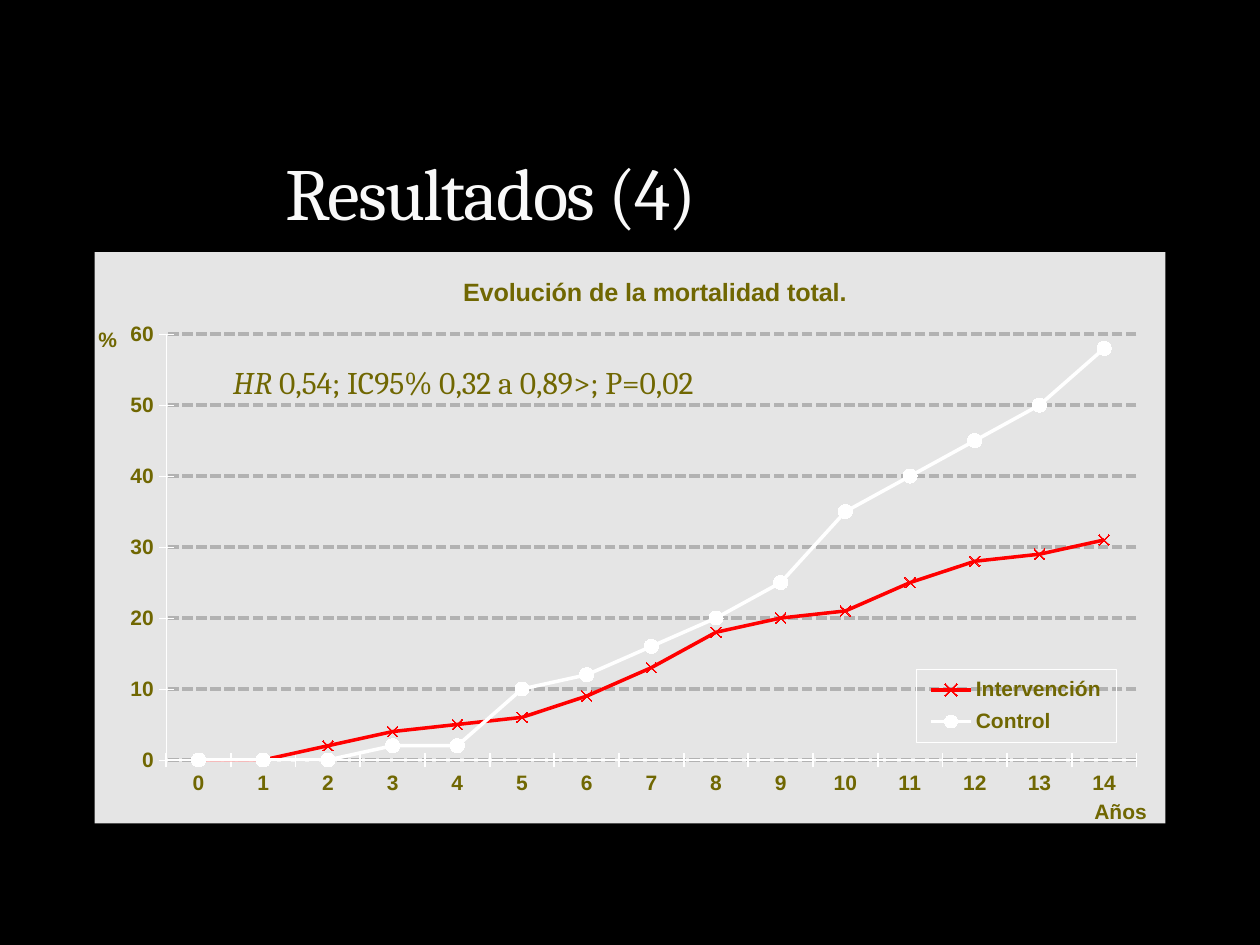
import pptx
import pptx.chart.data
import pptx.dml.color
import pptx.enum.chart
import pptx.enum.dml
import pptx.enum.text
import pptx.oxml
import pptx.oxml.ns
import pptx.util
from dataclasses import dataclass

Pt = pptx.util.Pt
qn = pptx.oxml.ns.qn


@dataclass(frozen=True)
class Theme:
    background: str = "000000"
    title: str = "F9F9F9"
    text: str = "706702"
    panel: str = "E5E5E5"
    grid: str = "B2B2B2"
    control: str = "FFFFFF"
    intervention: str = "FF0000"
    serif: str = "Cambria"
    sans: str = "Arial"
    title_size: float = 42
    note_size: float = 18
    chart_title_size: float = 14.4
    chart_size: float = 12
    thick: float = 2
    thin: float = 0.25


def color(value):
    return pptx.dml.color.RGBColor.from_string(value)


def style_line(line, value, width):
    line.color.rgb = color(value)
    line.width = Pt(width)


def place(element, index, x, y, w=None, h=None, inner=False):
    for old in element.findall(qn("c:layout")):
        element.remove(old)
    layout = pptx.oxml.parse_xml(f'<c:layout {pptx.oxml.ns.nsdecls("c")}><c:manualLayout/></c:layout>')
    values = [("layoutTarget", "inner")] if inner else []
    values += [("xMode", "edge"), ("yMode", "edge"), ("x", x), ("y", y), ("w", w), ("h", h)]
    for name, value in values:
        if value is not None:
            child = layout[0].makeelement(qn(f"c:{name}"), {"val": str(value)})
            layout[0].append(child)
    element.insert(index, layout)


class SlideBuilder:
    def __init__(self, deck, theme):
        self.theme = theme
        self.page = deck.slides.add_slide(deck.slide_layouts[6])
        fill = self.page.background.fill
        fill.solid()
        fill.fore_color.rgb = color(theme.background)

    def style_font(self, font, face, size, value, bold=False):
        font.name = face
        font.size = Pt(size)
        font.color.rgb = color(value)
        font.bold = bold

    def text(self, left, top, width, height, parts, size, value, anchor, wrap=True, spacing=None):
        box = self.page.shapes.add_textbox(Pt(left), Pt(top), Pt(width), Pt(height))
        frame = box.text_frame
        frame.word_wrap = wrap
        frame.vertical_anchor = anchor
        para = frame.paragraphs[0]
        for words, italic in parts:
            span = para.add_run()
            span.text = words
            self.style_font(span.font, self.theme.serif, size, value)
            span.font.italic = italic
            if spacing is not None:
                span.font._element.set("spc", str(spacing))

    def chart_label(self, title, words, size, x, y):
        frame = title.text_frame
        span = frame.paragraphs[0].add_run()
        span.text = words
        self.style_font(span.font, self.theme.sans, size, self.theme.text, True)
        frame._txBody.bodyPr.set("rot", "0")
        place(title._element, 1, x, y)

    def axis(self, axis, label, x, y, width):
        axis.major_tick_mark = pptx.enum.chart.XL_TICK_MARK.CROSS
        style_line(axis.format.line, self.theme.control, width)
        self.chart_label(axis.axis_title, label, self.theme.chart_size, x, y)

    def line_chart(self, left, top, width, height, title, categories, series):
        theme = self.theme
        data = pptx.chart.data.CategoryChartData()
        data.categories = categories
        for name, values, *_ in series:
            data.add_series(name, values)
        kind = pptx.enum.chart.XL_CHART_TYPE.LINE_MARKERS
        chart = self.page.shapes.add_chart(kind, Pt(left), Pt(top), Pt(width), Pt(height), data).chart
        self.style_font(chart.font, theme.sans, theme.chart_size, theme.text, True)
        space = chart._chartSpace
        space.chart.addnext(pptx.oxml.parse_xml(
            f'<c:spPr {pptx.oxml.ns.nsdecls("c", "a")}><a:solidFill><a:srgbClr val="{theme.panel}"/>'
            '</a:solidFill><a:ln><a:noFill/></a:ln></c:spPr>'))
        place(space.chart.plotArea, 0, 0.067, 0.144, 0.906, 0.745, inner=True)
        chart.has_title = True
        self.chart_label(chart.chart_title, title, theme.chart_title_size, 0.34, 0.035)

        self.axis(chart.category_axis, "Años", 0.93, 0.95, 1)
        chart.category_axis.tick_labels.number_format = "0"
        chart.category_axis.tick_labels.number_format_is_linked = False
        vertical = chart.value_axis
        self.axis(vertical, "%", 0, 0.125, theme.thin)
        vertical.minimum_scale, vertical.maximum_scale, vertical.major_unit = 0, 60, 10
        grid = vertical.major_gridlines.format.line
        style_line(grid, theme.grid, theme.thick)
        grid.dash_style = pptx.enum.dml.MSO_LINE.SQUARE_DOT
        grid._ln.find(qn("a:prstDash")).set("val", "sysDash")

        chart.plots[0].vary_by_categories = False
        for line, (_, _, value, shape, size) in zip(chart.plots[0].series, series):
            line.smooth = False
            style_line(line.format.line, value, theme.thick)
            line.marker.style = shape
            line.marker.size = size
            line.marker.format.fill.solid()
            line.marker.format.fill.fore_color.rgb = color(value)
            style_line(line.marker.format.line, value, theme.thin)

        chart.has_legend = True
        legend = chart.legend
        legend.position = pptx.enum.chart.XL_LEGEND_POSITION.RIGHT
        legend.include_in_layout = False
        place(legend._element, 1, 0.767, 0.73, 0.187, 0.128)
        legend._element.find(qn("c:overlay")).addnext(pptx.oxml.parse_xml(
            f'<c:spPr {pptx.oxml.ns.nsdecls("c", "a")}><a:noFill/><a:ln w="{Pt(theme.thin)}"><a:solidFill>'
            f'<a:srgbClr val="{theme.control}"/></a:solidFill></a:ln></c:spPr>'))


def main():
    theme = Theme()
    deck = pptx.Presentation()
    deck.slide_width, deck.slide_height = Pt(720), Pt(540)
    slide = SlideBuilder(deck, theme)
    anchors = pptx.enum.text.MSO_ANCHOR
    markers = pptx.enum.chart.XL_MARKER_STYLE
    slide.text(156, 48, 510, 90, [("Resultados (4)", False)],
               theme.title_size, theme.title, anchors.BOTTOM, spacing=-100)
    slide.line_chart(54, 144, 612, 330, "Evolución de la mortalidad total.", range(15), [
        ("Intervención", (0, 0, 2, 4, 5, 6, 9, 13, 18, 20, 21, 25, 28, 29, 31),
         theme.intervention, markers.X, 6),
        ("Control", (0, 0, 0, 2, 2, 10, 12, 16, 20, 25, 35, 40, 45, 50, 58),
         theme.control, markers.CIRCLE, 8),
    ])
    slide.text(126, 204, 302, 29, [("HR", True), (" 0,54; IC95% 0,32 a 0,89>; P=0,02", False)],
               theme.note_size, theme.text, anchors.TOP, wrap=False)
    deck.save("out.pptx")


if __name__ == "__main__":
    main()
